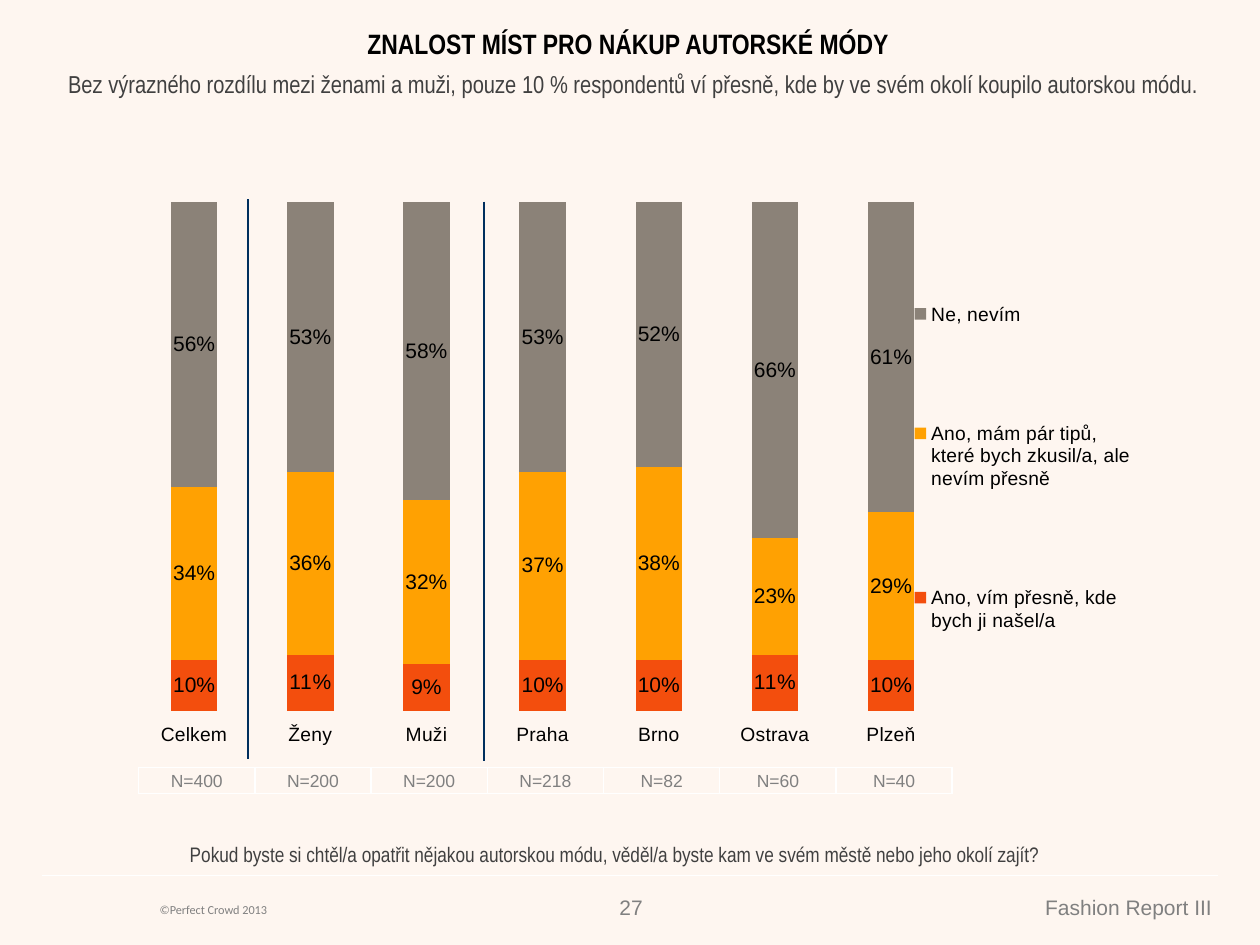
from lxml import etree
from pptx import Presentation
from pptx.chart.data import CategoryChartData
from pptx.dml.color import RGBColor
from pptx.enum.chart import (XL_CHART_TYPE, XL_LABEL_POSITION, XL_LEGEND_POSITION,
                             XL_TICK_LABEL_POSITION, XL_TICK_MARK)
from pptx.enum.text import MSO_ANCHOR, MSO_AUTO_SIZE, PP_ALIGN
from pptx.oxml import parse_xml
from pptx.oxml.ns import nsdecls, qn
from pptx.util import Pt

BACKGROUND = RGBColor(0xFE, 0xF6, 0xF0)
WHITE = RGBColor(0xFF, 0xFF, 0xFF)
BLACK = RGBColor(0x00, 0x00, 0x00)
DARK_GREY = RGBColor(0x40, 0x40, 0x40)
GREY = RGBColor(0x80, 0x80, 0x80)
NAVY = RGBColor(0x00, 0x2F, 0x5E)
RED = RGBColor(0xF3, 0x4E, 0x0D)
ORANGE = RGBColor(0xFF, 0xA1, 0x02)
TAUPE = RGBColor(0x8B, 0x82, 0x78)

CITIES_AND_GROUPS = ["Celkem", "Ženy", "Muži", "Praha", "Brno", "Ostrava", "Plzeň"]
SAMPLE_SIZES = [400, 200, 200, 218, 82, 60, 40]
ANSWERS = [
    ("Ano, vím přesně, kde bych ji našel/a", RED, [10, 11, 9, 10, 10, 11, 10]),
    ("Ano, mám pár tipů, které bych zkusil/a, ale nevím přesně", ORANGE,
     [34, 36, 32, 37, 38, 23, 29]),
    ("Ne, nevím", TAUPE, [56, 53, 58, 53, 52, 66, 61]),
]


def write_text(frame, text, size=12, font="Arial", color=GREY, bold=False,
               align=PP_ALIGN.LEFT, anchor=MSO_ANCHOR.TOP):
    """Fill a text frame with one formatted paragraph."""
    frame.word_wrap = True
    frame.vertical_anchor = anchor
    paragraph = frame.paragraphs[0]
    paragraph.text = text
    paragraph.alignment = align
    paragraph.space_before = Pt(0)
    paragraph.font.name = font
    paragraph.font.size = Pt(size)
    paragraph.font.bold = bold
    paragraph.font.color.rgb = color
    return paragraph


def place(shape, left, top, width, height):
    shape.left, shape.top = Pt(left), Pt(top)
    shape.width, shape.height = Pt(width), Pt(height)


def fill_placeholder(shape, box, text, **text_format):
    place(shape, *box)
    shape.text_frame.auto_size = MSO_AUTO_SIZE.NONE
    paragraph = write_text(shape.text_frame, text, **text_format)
    properties = paragraph._p.get_or_add_pPr()
    properties.set("marL", "0")
    properties.set("indent", "0")
    bullet = parse_xml(f"<a:buNone {nsdecls('a')}/>")
    properties.find(qn("a:spcBef")).addnext(bullet)


def add_label(slide, box, text, **text_format):
    label = slide.shapes.add_textbox(*(Pt(length) for length in box))
    write_text(label.text_frame, text, **text_format)


def add_rule(slide, start, end, color):
    rule = slide.shapes.add_connector(1, *(Pt(length) for length in start + end))
    rule.line.color.rgb = color
    rule.line.width = Pt(0.75)
    etree.SubElement(rule._element.spPr, qn("a:effectLst"))


def manual_layout(x, y, width, height, inner=False):
    """Layout element with positions as fractions of the chart."""
    target = '<c:layoutTarget val="inner"/>' if inner else ""
    return parse_xml(
        f"<c:layout {nsdecls('c')}><c:manualLayout>{target}"
        '<c:xMode val="edge"/><c:yMode val="edge"/>'
        f'<c:x val="{x}"/><c:y val="{y}"/><c:w val="{width}"/><c:h val="{height}"/>'
        "</c:manualLayout></c:layout>")


def add_answer_chart(slide, box):
    data = CategoryChartData()
    data.categories = CITIES_AND_GROUPS
    for answer, _, shares in ANSWERS:
        data.add_series(answer, shares)
    chart = slide.shapes.add_chart(XL_CHART_TYPE.COLUMN_STACKED_100,
                                   *(Pt(length) for length in box), data).chart
    chart.has_title = False
    chart.font.name = "Arial"
    chart.font.size = Pt(12)
    chart.font.color.rgb = BLACK

    # Columns and their labels
    plot = chart.plots[0]
    plot.gap_width = 150
    plot.overlap = 100
    plot.vary_by_categories = False
    for series, (_, color, _) in zip(plot.series, ANSWERS):
        series.format.fill.solid()
        series.format.fill.fore_color.rgb = color
        labels = series.data_labels
        labels.show_value = True
        labels.position = XL_LABEL_POSITION.CENTER
        labels.number_format = '#,##0"%"'
        labels.number_format_is_linked = False
        labels.font.size = Pt(12)
        labels.font.color.rgb = BLACK

    # Axes
    chart.value_axis.visible = False
    chart.value_axis.has_major_gridlines = False
    groups = chart.category_axis
    groups.tick_label_position = XL_TICK_LABEL_POSITION.LOW
    groups.major_tick_mark = XL_TICK_MARK.OUTSIDE
    groups.tick_labels.font.size = Pt(11)
    groups.format.line.fill.background()

    # Legend and layout
    chart.has_legend = True
    legend = chart.legend
    legend.position = XL_LEGEND_POSITION.RIGHT
    legend.include_in_layout = False
    legend.font.size = Pt(11)
    for part, layout in (
            (chart._chartSpace.chart.plotArea,
             manual_layout(0.022, 0.055, 0.787, 0.807, inner=True)),
            (legend._element, manual_layout(0.77, 0.06, 0.22, 0.83))):
        old_layout = part.find(qn("c:layout"))
        if old_layout is not None:
            part.remove(old_layout)
        if part is legend._element:
            part.find(qn("c:legendPos")).addnext(layout)
        else:
            part.insert(0, layout)


def add_sample_table(slide, box):
    table = slide.shapes.add_table(1, len(SAMPLE_SIZES),
                                   *(Pt(length) for length in box)).table
    table.first_row = False
    table.horz_banding = False
    for cell, count in zip(table.rows[0].cells, SAMPLE_SIZES):
        cell.fill.background()
        cell.margin_left = cell.margin_right = cell.margin_top = Pt(0.7)
        cell.margin_bottom = Pt(0)
        write_text(cell.text_frame, f"N={count}", size=10, align=PP_ALIGN.CENTER)
        cell.vertical_anchor = MSO_ANCHOR.MIDDLE


def main():
    presentation = Presentation()
    presentation.slide_width, presentation.slide_height = Pt(720), Pt(540)
    slide = presentation.slides.add_slide(presentation.slide_layouts[1])
    slide.background.fill.solid()
    slide.background.fill.fore_color.rgb = BACKGROUND

    # Footer
    add_rule(slide, (24, 500.4), (696, 500.4), WHITE)
    add_label(slide, (84.2, 512, 209.5, 16), "©Perfect Crowd 2013", size=7, font="Calibri")
    add_label(slide, (432.7, 507.6, 267, 21.6), "Fashion Report III", align=PP_ALIGN.RIGHT)
    add_label(slide, (344.9, 507.6, 29.5, 21.6), "27", align=PP_ALIGN.RIGHT)

    # Headline and finding
    fill_placeholder(slide.shapes.title, (40.3, 11.5, 637.2, 26.6),
                     "ZNALOST MÍST PRO NÁKUP AUTORSKÉ MÓDY", size=16, font="Arial Narrow",
                     color=BLACK, bold=True, align=PP_ALIGN.CENTER, anchor=MSO_ANCHOR.MIDDLE)
    fill_placeholder(slide.placeholders[1], (31.7, 36, 673.9, 64),
                     "Bez výrazného rozdílu mezi ženami a muži, pouze 10 % respondentů ví přesně, "
                     "kde by ve svém okolí koupilo autorskou módu.",
                     size=14, font="Arial Narrow", color=DARK_GREY)

    # Chart with group dividers and sample sizes
    add_answer_chart(slide, (64.8, 95.8, 590.4, 360))
    for x, top in ((141.8, 113.8), (276.5, 115.2)):
        add_rule(slide, (x, top), (x, top + 319.7), NAVY)
    add_sample_table(slide, (79.2, 438.5, 465, 15.1))

    # Survey question
    add_label(slide, (25.2, 477.5, 652.3, 21.6),
              "Pokud byste si chtěl/a opatřit nějakou autorskou módu, věděl/a byste kam "
              "ve svém městě nebo jeho okolí zajít?",
              font="Arial Narrow", color=DARK_GREY, align=PP_ALIGN.CENTER)

    presentation.save("out.pptx")


if __name__ == "__main__":
    main()
